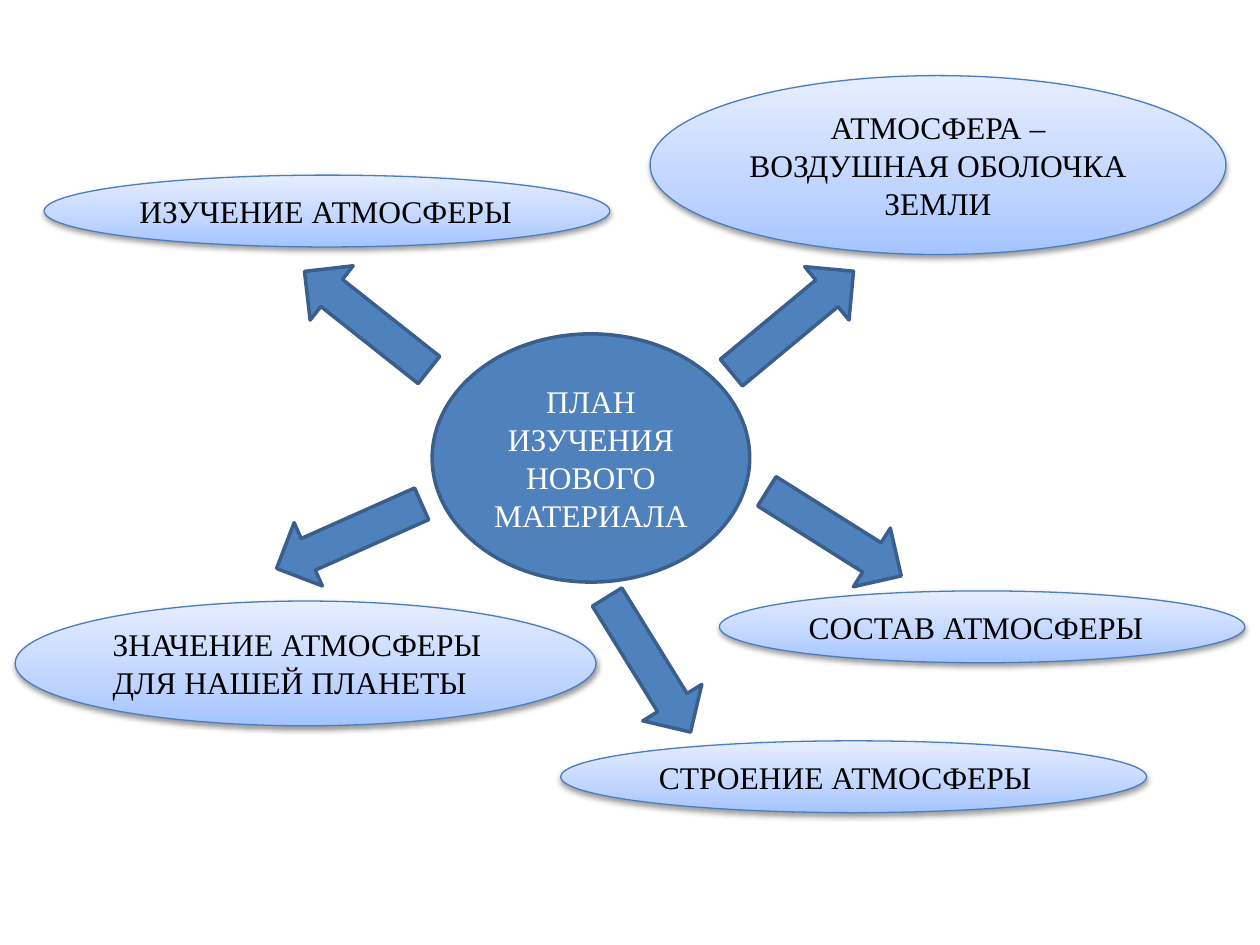
import pptx
import pptx.dml.color
import pptx.enum.shapes
import pptx.enum.text
import pptx.oxml
import pptx.oxml.ns
import pptx.util
from dataclasses import dataclass

Inches = pptx.util.Inches
Pt = pptx.util.Pt
Kind = pptx.enum.shapes.MSO_SHAPE
Align = pptx.enum.text.PP_ALIGN
Anchor = pptx.enum.text.MSO_ANCHOR

FONT = "Times New Roman"
BLUE, EDGE = "4F81BD", "3A5F8C"
STOPS = ((0, "A4C4FF"), (35, "BFD4FF"), (100, "E6EEFF"))
ARROW_W, ARROW_H = 1.26, 0.55


@dataclass
class Topic:
    text: str
    left: float
    top: float
    width: float
    height: float = 0.57
    align: Align = Align.LEFT


@dataclass
class Arrow:
    left: float
    top: float
    angle: float


TOPICS = [
    Topic("АТМОСФЕРА – ВОЗДУШНАЯ ОБОЛОЧКА ЗЕМЛИ", 5.16, 0.6, 4.57, 1.42, Align.CENTER),
    Topic("СОСТАВ АТМОСФЕРЫ", 5.71, 4.69, 4.17),
    Topic("ЗНАЧЕНИЕ АТМОСФЕРЫ ДЛЯ НАШЕЙ ПЛАНЕТЫ", 0.12, 4.77, 4.61, 0.99),
    Topic("СТРОЕНИЕ АТМОСФЕРЫ", 4.45, 5.88, 4.65),
    Topic("ИЗУЧЕНИЕ АТМОСФЕРЫ", 0.35, 1.39, 4.49),
]
ARROWS = [
    Arrow(5.66, 2.28, 320.3),
    Arrow(2.14, 3.98, 156),
    Arrow(2.28, 2.27, 218.4),
    Arrow(5.99, 3.96, 32.2),
    Arrow(4.52, 5, 58.3),
]


def color(code: str) -> pptx.dml.color.RGBColor:
    return pptx.dml.color.RGBColor.from_string(code)


def add(slide, kind: Kind, left: float, top: float, width: float, height: float,
        edge: str = EDGE, weight: float = 2):
    """Add a solid blue shape with an outline and no shadow."""
    shape = slide.shapes.add_shape(
        kind, Inches(left), Inches(top), Inches(width), Inches(height))
    shape.shadow.inherit = False
    shape.fill.solid()
    shape.fill.fore_color.rgb = color(BLUE)
    shape.line.color.rgb = color(edge)
    shape.line.width = Pt(weight)
    return shape


def write(shape, text: str, ink: str, align: Align, anchor: Anchor) -> None:
    frame = shape.text_frame
    frame.text = text
    frame.word_wrap = True
    frame.vertical_anchor = anchor
    para = frame.paragraphs[0]
    para.alignment = align
    font = para.runs[0].font
    font.name, font.size = FONT, Pt(18)
    font.color.rgb = color(ink)


def shade(shape) -> None:
    """Give the shape a three-stop gradient and a soft shadow below it."""
    space = pptx.oxml.ns.nsdecls("a")
    stops = "".join(
        f'<a:gs pos="{pos * 1000}"><a:srgbClr val="{code}"/></a:gs>'
        for pos, code in STOPS)
    grad = pptx.oxml.parse_xml(
        f'<a:gradFill {space} rotWithShape="1"><a:gsLst>{stops}</a:gsLst>'
        '<a:lin ang="16200000" scaled="0"/></a:gradFill>')
    glow = pptx.oxml.parse_xml(
        f'<a:outerShdw {space} blurRad="{Pt(3.1)}" dist="{Pt(1.6)}" dir="5400000"'
        ' rotWithShape="0"><a:srgbClr val="000000"><a:alpha val="38000"/>'
        '</a:srgbClr></a:outerShdw>')
    props = shape.element.spPr
    props.replace(props.find(pptx.oxml.ns.qn("a:solidFill")), grad)
    props.find(pptx.oxml.ns.qn("a:effectLst")).append(glow)


def add_topic(slide, topic: Topic) -> None:
    shape = add(slide, Kind.OVAL, topic.left, topic.top, topic.width, topic.height,
                "4B7EBC", 0.75)
    shade(shape)
    write(shape, topic.text, "000000", topic.align, Anchor.TOP)
    shape.text_frame.auto_size = pptx.enum.text.MSO_AUTO_SIZE.SHAPE_TO_FIT_TEXT


def add_arrow(slide, arrow: Arrow) -> None:
    shape = add(slide, Kind.RIGHT_ARROW, arrow.left, arrow.top, ARROW_W, ARROW_H)
    shape.rotation = arrow.angle


def main() -> None:
    deck = pptx.Presentation()
    deck.slide_width, deck.slide_height = Inches(10), Inches(7.5)
    slide = deck.slides.add_slide(deck.slide_layouts[6])
    hub = add(slide, Kind.OVAL, 3.43, 2.65, 2.52, 1.97)
    write(hub, "ПЛАН ИЗУЧЕНИЯ НОВОГО МАТЕРИАЛА", "FFFFFF", Align.CENTER, Anchor.MIDDLE)
    for topic in TOPICS:
        add_topic(slide, topic)
    for arrow in ARROWS:
        add_arrow(slide, arrow)
    deck.save("out.pptx")


if __name__ == "__main__":
    main()
